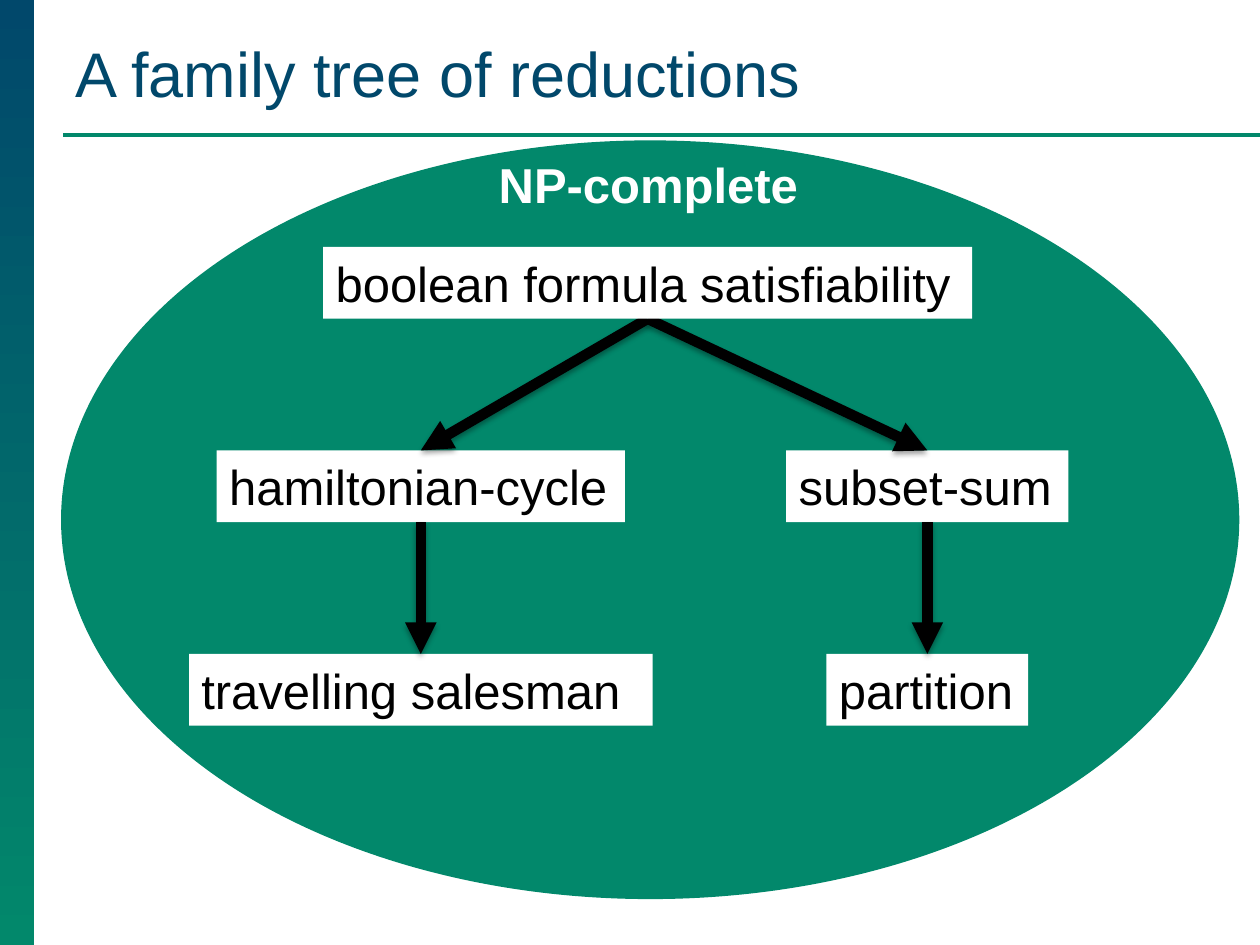
from dataclasses import dataclass

from lxml import etree
from pptx import Presentation
from pptx.dml.color import RGBColor
from pptx.enum.shapes import MSO_CONNECTOR, MSO_SHAPE
from pptx.enum.text import MSO_ANCHOR, PP_ALIGN
from pptx.oxml import parse_xml
from pptx.oxml.ns import nsdecls, qn
from pptx.util import Inches, Pt

RECTANGLE, OVAL = MSO_SHAPE.RECTANGLE, MSO_SHAPE.OVAL
STRAIGHT = MSO_CONNECTOR.STRAIGHT
LEFT, CENTER = PP_ALIGN.LEFT, PP_ALIGN.CENTER
TOP, BOTTOM = MSO_ANCHOR.TOP, MSO_ANCHOR.BOTTOM
TOP_SIDE, BOTTOM_SIDE = 0, 2
COLUMNS, ROWS = 100, 75


@dataclass(frozen=True)
class Theme:
    font: str = "Arial"
    navy: RGBColor = RGBColor(0x01, 0x48, 0x6B)
    green: RGBColor = RGBColor(0x02, 0x88, 0x6B)
    white: RGBColor = RGBColor(0xFF, 0xFF, 0xFF)
    black: RGBColor = RGBColor(0x00, 0x00, 0x00)
    title_size: int = 36
    label_size: int = 28
    rule_width: float = 2.25
    arrow_width: float = 6


SHADOW = (
    f'<a:effectLst {nsdecls("a")}><a:outerShdw blurRad="{Pt(3.1)}" dist="{Pt(1.8)}" '
    'dir="5400000" rotWithShape="0"><a:srgbClr val="000000"><a:alpha val="35000"/>'
    "</a:srgbClr></a:outerShdw></a:effectLst>"
)


class SlideBuilder:
    """Places elements on a grid of 100 columns by 75 rows."""

    def __init__(self, deck, theme):
        self.theme = theme
        self.column = deck.slide_width / COLUMNS
        self.row = deck.slide_height / ROWS
        self.page = deck.slides.add_slide(deck.slide_layouts[6])

    def place(self, left, top, width, height):
        return (round(left * self.column), round(top * self.row),
                round(width * self.column), round(height * self.row))

    def shape(self, kind, area, color):
        shape = self.page.shapes.add_shape(kind, *self.place(*area))
        shape.shadow.inherit = False
        shape.fill.solid()
        shape.fill.fore_color.rgb = color
        shape.line.fill.background()
        return shape

    def side_band(self, area):
        band = self.shape(RECTANGLE, area, self.theme.navy)
        band.fill.gradient()
        band.fill.gradient_angle = 270
        for stop, color in zip(band.fill.gradient_stops, (self.theme.navy, self.theme.green)):
            stop.color.rgb = color

    def oval(self, area):
        oval = self.shape(OVAL, area, self.theme.green)
        oval.line.color.rgb = self.theme.green
        oval.line.width = Pt(self.theme.rule_width)

    def set_text(self, box, text, size, color, align=LEFT, anchor=TOP, bold=False):
        frame = box.text_frame
        frame.text = text
        frame.word_wrap = True
        frame.vertical_anchor = anchor
        para = frame.paragraphs[0]
        para.alignment = align
        font = para.runs[0].font
        font.name, font.size, font.bold = self.theme.font, Pt(size), bold
        font.color.rgb = color

    def text(self, area, text, size, color, **style):
        box = self.page.shapes.add_textbox(*self.place(*area))
        self.set_text(box, text, size, color, **style)

    def problem(self, center, top, width, text):
        """White label box centred on a column."""
        box = self.shape(RECTANGLE, (center - width / 2, top, width, 5.7), self.theme.white)
        self.set_text(box, text, self.theme.label_size, self.theme.black)
        return box

    def line(self, start, end, color, width):
        x1, y1, x2, y2 = self.place(*start, *end)
        line = self.page.shapes.add_connector(STRAIGHT, x1, y1, x2, y2)
        line.line.color.rgb = color
        line.line.width = Pt(width)
        return line

    def rule(self, start, end):
        rule = self.line(start, end, self.theme.green, self.theme.rule_width)
        etree.SubElement(rule._element.spPr, qn("a:effectLst"))

    def arrow(self, parent, child):
        arrow = self.line((0, 0), (0, 0), self.theme.black, self.theme.arrow_width)
        arrow.begin_connect(parent, BOTTOM_SIDE)
        arrow.end_connect(child, TOP_SIDE)
        outline = arrow._element.spPr.find(qn("a:ln"))
        etree.SubElement(outline, qn("a:tailEnd"), type="triangle")
        arrow._element.spPr.append(parse_xml(SHADOW))

    def bring_to_front(self, shape):
        self.page.shapes._spTree.append(shape._element)


def main():
    deck = Presentation()
    deck.slide_width, deck.slide_height = Inches(10), Inches(7.5)
    theme = Theme()
    slide = SlideBuilder(deck, theme)

    slide.side_band((0, 0, 2.7, ROWS))
    slide.rule((5, 10.7), (COLUMNS, 10.7))
    slide.oval((5, 11.3, 93.2, 59.9))
    slide.text((5, 2.1, 92.8, 7.1), "A family tree of reductions",
               theme.title_size, theme.navy, anchor=BOTTOM)
    slide.text((38.4, 11.8, 26.1, 5.7), "NP-complete",
               theme.label_size, theme.white, align=CENTER, bold=True)

    first_row, row_step = 19.6, 16.15
    second_row, third_row = (first_row + row_step * step for step in (1, 2))
    left_branch, right_branch = 33.4, 73.6

    root = slide.problem(51.4, first_row, 51.5, "boolean formula satisfiability")
    cycle = slide.problem(left_branch, second_row, 32.4, "hamiltonian-cycle")
    subset = slide.problem(right_branch, second_row, 22.4, "subset-sum")
    salesman = slide.problem(left_branch, third_row, 36.8, "travelling salesman")
    partition = slide.problem(right_branch, third_row, 16, "partition")

    for parent, child in ((root, cycle), (root, subset), (cycle, salesman), (subset, partition)):
        slide.arrow(parent, child)
    slide.bring_to_front(root)

    deck.save("out.pptx")


if __name__ == "__main__":
    main()
